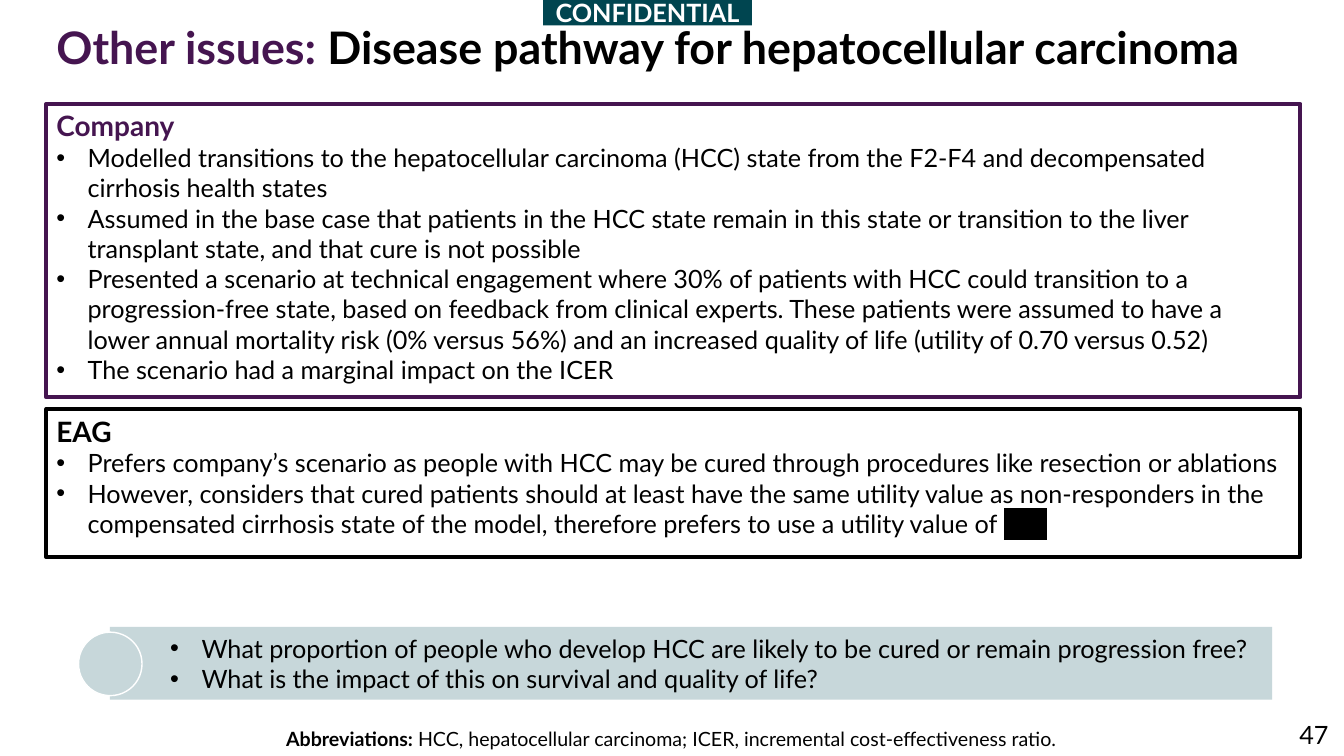
from lxml import etree
from pptx import Presentation
from pptx.dml.color import RGBColor
from pptx.enum.shapes import MSO_SHAPE
from pptx.enum.text import MSO_ANCHOR as Anchor, PP_ALIGN as Align
from pptx.oxml.ns import qn
from pptx.util import Cm, Pt

COLORS = {
    "purple": "451550",
    "black": "000000",
    "white": "FFFFFF",
    "teal": "004550",
    "pale": "C7D7DA",
}
FONT = "Lato"
HANGING = 0.79

presentation = Presentation()
presentation.slide_width = Cm(33.87)
presentation.slide_height = Cm(19.05)
slide = presentation.slides.add_slide(presentation.slide_layouts[6])


def add_box(place, kind=None, fill=None, line=None, line_width=3, anchor=Anchor.TOP):
    """Add a preset shape, or a text box when no kind is given; place is in cm."""
    place = [Cm(length) for length in place]
    if kind is None:
        shape = slide.shapes.add_textbox(*place)
    else:
        shape = slide.shapes.add_shape(kind, *place)
        shape.shadow.inherit = False
        if fill:
            shape.fill.solid()
            shape.fill.fore_color.rgb = RGBColor.from_string(COLORS[fill])
        else:
            shape.fill.background()
        if line:
            shape.line.color.rgb = RGBColor.from_string(COLORS[line])
            shape.line.width = Pt(line_width)
        else:
            shape.line.fill.background()
    shape.text_frame.word_wrap = True
    shape.text_frame.vertical_anchor = anchor
    return shape


def write(paragraph, runs, size=18, align=Align.LEFT, bullet_indent=None):
    """Fill a paragraph with (text, color, bold) runs; bullet_indent in cm adds a bullet."""
    paragraph.alignment = align
    if bullet_indent is not None:
        properties = paragraph._p.get_or_add_pPr()
        properties.set("marL", str(Cm(bullet_indent)))
        properties.set("indent", str(-Cm(HANGING)))
        etree.SubElement(properties, qn("a:buFont"), typeface="Arial")
        etree.SubElement(properties, qn("a:buChar"), char="•")
    for text, color, bold in runs:
        run = paragraph.add_run()
        run.text = text
        run.font.name = FONT
        run.font.size = Pt(size)
        run.font.bold = bold
        run.font.color.rgb = RGBColor.from_string(COLORS[color])


# Page number and title
page_number = add_box((29.06, 18.01, 4.67, 1.02))
write(page_number.text_frame.paragraphs[0], [("47", "black", False)], align=Align.RIGHT)

title = add_box((1.17, 0.53, 31.55, 1.85)).text_frame.paragraphs[0]
title.line_spacing = 0.9
write(title, [("Other issues: ", "purple", True),
              ("Disease pathway for hepatocellular carcinoma", "black", True)], size=32)

# Positions of the company and the EAG
panels = [
    ("Company", "purple", 2.62, 7.39, [
        "Modelled transitions to the hepatocellular carcinoma (HCC) state from the F2-F4 "
        "and decompensated cirrhosis health states",
        "Assumed in the base case that patients in the HCC state remain in this state or "
        "transition to the liver transplant state, and that cure is not possible",
        "Presented a scenario at technical engagement where 30% of patients with HCC could "
        "transition to a progression-free state, based on feedback from clinical experts. "
        "These patients were assumed to have a lower annual mortality risk (0% versus 56%) "
        "and an increased quality of life (utility of 0.70 versus 0.52)",
        "The scenario had a marginal impact on the ICER",
    ]),
    ("EAG", "black", 10.31, 3.73, [
        "Prefers company’s scenario as people with HCC may be cured through procedures like "
        "resection or ablations",
        "However, considers that cured patients should at least have the same utility value "
        "as non-responders in the compensated cirrhosis state of the model, therefore "
        "prefers to use a utility value of ",
    ]),
]
for heading, color, top, height, points in panels:
    panel = add_box((1.17, top, 31.6, height), MSO_SHAPE.RECTANGLE, line=color)
    write(panel.text_frame.paragraphs[0], [(heading, color, True)], size=20)
    for point in points:
        paragraph = panel.text_frame.add_paragraph()
        write(paragraph, [(point, "black", False)], bullet_indent=HANGING)

# Redacted utility value closing the last EAG point
write(paragraph, [("****", "black", False)])
redacted = paragraph.runs[-1]
redacted.font.underline = True
highlight = etree.Element(qn("a:highlight"))
etree.SubElement(highlight, qn("a:srgbClr"), val=COLORS["black"])
redacted._r.rPr.find(qn("a:latin")).addprevious(highlight)

# Questions for discussion
questions = [
    "What proportion of people who develop HCC are likely to be cured or remain progression free?",
    "What is the impact of this on survival and quality of life?",
]
banner = add_box((2.77, 15.8, 29.29, 1.83), MSO_SHAPE.RECTANGLE, fill="pale",
                 anchor=Anchor.MIDDLE)
for index, question in enumerate(questions):
    frame = banner.text_frame
    paragraph = frame.add_paragraph() if index else frame.paragraphs[0]
    paragraph.level = 1
    write(paragraph, [(question, "black", False)], bullet_indent=2.06)
add_box((1.98, 15.93, 1.6, 1.6), MSO_SHAPE.OVAL, fill="pale", line="white", line_width=1)

# Footnote and confidentiality mark
footnote = add_box((6.96, 18.19, 20.04, 0.86))
footnote.text_frame.word_wrap = False
write(footnote.text_frame.paragraphs[0], [
    ("Abbreviations: ", "black", True),
    ("HCC, hepatocellular carcinoma; ICER, incremental cost-effectiveness ratio.", "black", False),
], size=14)

mark = add_box((13.69, 0, 5.26, 0.64), MSO_SHAPE.RECTANGLE, fill="teal", anchor=Anchor.MIDDLE)
write(mark.text_frame.paragraphs[0], [("CONFIDENTIAL", "white", True)], align=Align.CENTER)

presentation.save("out.pptx")
